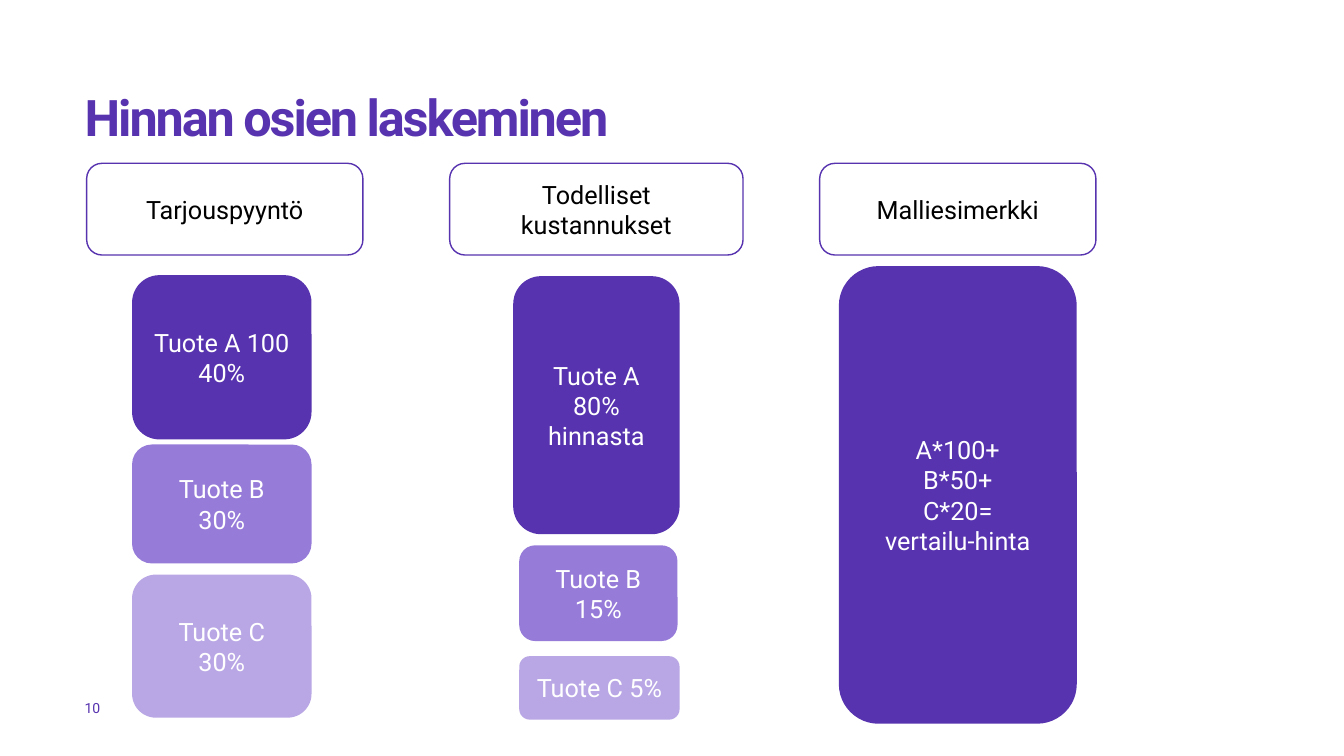
from pptx import Presentation
from pptx.dml.color import RGBColor
from pptx.enum.shapes import MSO_SHAPE
from pptx.enum.text import MSO_ANCHOR, PP_ALIGN
from pptx.util import Inches, Pt

PURPLE = RGBColor(0x57, 0x33, 0xAF)
MID_PURPLE = RGBColor(0x96, 0x7B, 0xD9)
LIGHT_PURPLE = RGBColor(0xB9, 0xA7, 0xE5)
WHITE = RGBColor(0xFF, 0xFF, 0xFF)
BLACK = RGBColor(0x00, 0x00, 0x00)
FONT = "Roboto"

# Left, width and text of each column heading
HEADINGS = [
    (0.86, 2.74, "Tarjouspyyntö"),
    (4.46, 2.91, "Todelliset kustannukset"),
    (8.13, 2.74, "Malliesimerkki"),
]

# Left, top, width, height, fill and text of each price block
BLOCKS = [
    (1.31, 2.73, 1.78, 1.63, PURPLE, "Tuote A 100\n40%"),
    (1.31, 4.41, 1.78, 1.18, MID_PURPLE, "Tuote B\n30%"),
    (1.31, 5.7, 1.78, 1.42, LIGHT_PURPLE, "Tuote C\n30%"),
    (5.09, 2.74, 1.65, 2.56, PURPLE, "Tuote A 80% hinnasta"),
    (5.15, 5.41, 1.57, 0.95, MID_PURPLE, "Tuote B 15%"),
    (5.15, 6.51, 1.59, 0.63, LIGHT_PURPLE, "Tuote C 5%"),
    (8.32, 2.64, 2.36, 4.54, PURPLE, "A*100+\nB*50+\nC*20=\nvertailu-hinta"),
]


def place(sp, left, top, width, height):
    sp.left, sp.top = Inches(left), Inches(top)
    sp.width, sp.height = Inches(width), Inches(height)


def format_text(tf, size, color, align, anchor):
    tf.word_wrap = True
    tf.vertical_anchor = anchor
    for p in tf.paragraphs:
        p.alignment = align
        for r in p.runs:
            r.font.name = FONT
            r.font.size = Pt(size)
            r.font.color.rgb = color


def clear_margins(tf):
    tf.margin_left = tf.margin_top = tf.margin_right = tf.margin_bottom = 0


def add_title(s, text):
    sp = s.shapes.title
    place(sp, 0.84, 0.92, 11.66, 1.73)
    tf = sp.text_frame
    tf.text = text
    clear_margins(tf)
    format_text(tf, 36, PURPLE, PP_ALIGN.LEFT, MSO_ANCHOR.TOP)
    p = tf.paragraphs[0]
    p.line_spacing = 0.9
    r = p.runs[0]
    r.font.bold = True
    r.font._element.set("spc", "-150")


def add_page_number(s, number):
    sp = s.shapes.add_textbox(Inches(0.84), Inches(6.9), Inches(0.47), Inches(0.24))
    tf = sp.text_frame
    tf.text = number
    clear_margins(tf)
    format_text(tf, 10, PURPLE, PP_ALIGN.LEFT, MSO_ANCHOR.MIDDLE)


def add_box(s, left, top, width, height, fill, text, color=WHITE, line=None):
    """Add a rounded box with centred text, outlined only if line is given."""
    sp = s.shapes.add_shape(MSO_SHAPE.ROUNDED_RECTANGLE, Inches(left), Inches(top),
                            Inches(width), Inches(height))
    sp.shadow.inherit = False
    sp.fill.solid()
    sp.fill.fore_color.rgb = fill
    if line is None:
        sp.line.fill.background()
    else:
        sp.line.color.rgb = line
        sp.line.width = Pt(1)
    sp.text_frame.text = text
    format_text(sp.text_frame, 18, color, PP_ALIGN.CENTER, MSO_ANCHOR.MIDDLE)


def main():
    prs = Presentation()
    prs.slide_width, prs.slide_height = Inches(13.33), Inches(7.5)
    s = prs.slides.add_slide(prs.slide_layouts[5])

    add_title(s, "Hinnan osien laskeminen")
    add_page_number(s, "10")
    for block in BLOCKS:
        add_box(s, *block)
    for left, width, text in HEADINGS:
        add_box(s, left, 1.62, width, 0.91, WHITE, text, color=BLACK, line=PURPLE)

    prs.save("out.pptx")


if __name__ == "__main__":
    main()
